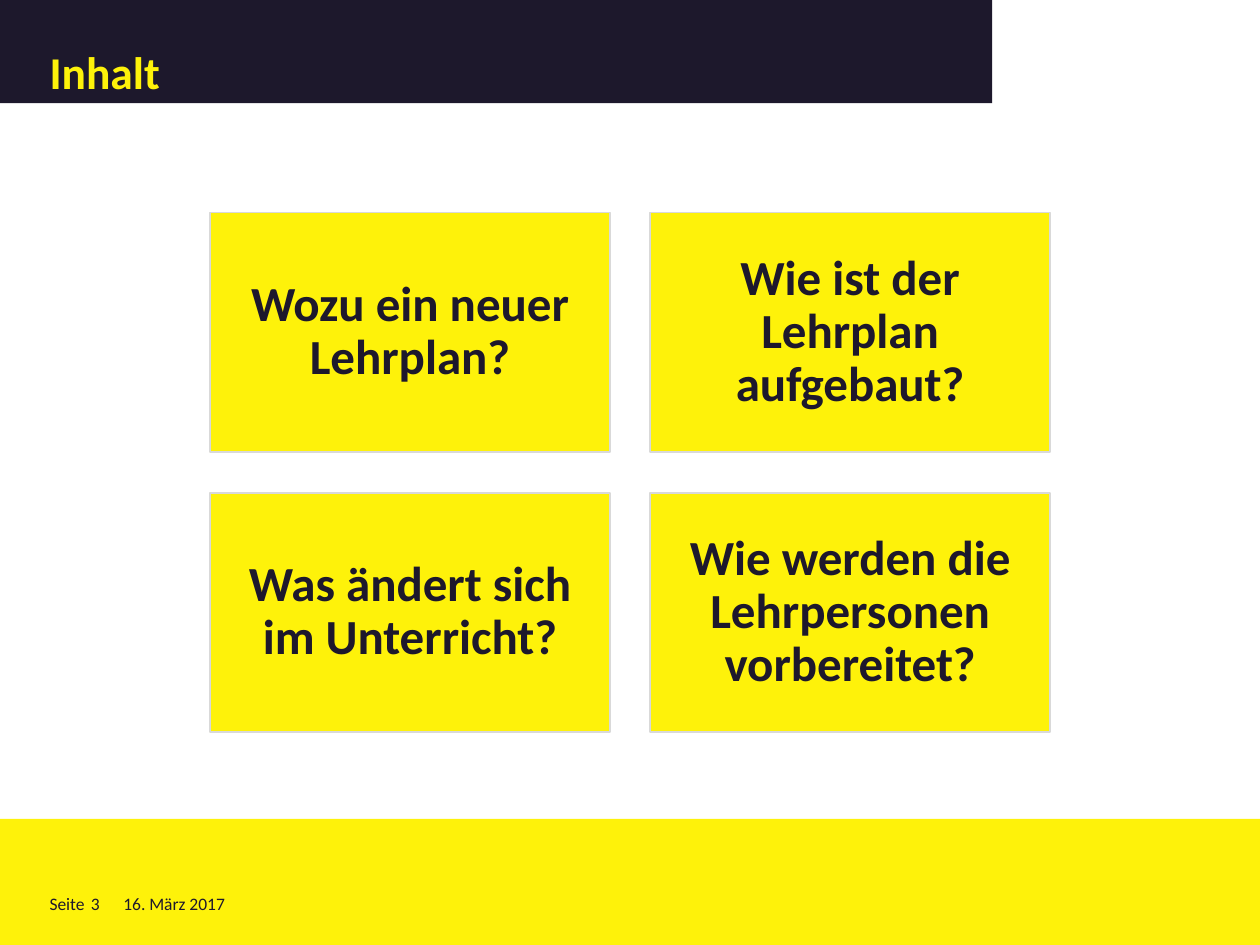
from dataclasses import dataclass

from pptx import Presentation
from pptx.dml.color import RGBColor
from pptx.enum.shapes import MSO_SHAPE
from pptx.enum.text import MSO_ANCHOR, PP_ALIGN
from pptx.shapes.autoshape import Shape
from pptx.slide import Slide
from pptx.util import Pt


@dataclass(frozen=True)
class Theme:
    font: str = "Calibri"
    yellow: RGBColor = RGBColor(0xFE, 0xF2, 0x0A)
    dark: RGBColor = RGBColor(0x1D, 0x18, 0x2C)
    border: RGBColor = RGBColor(0xD9, 0xD9, 0xD9)
    title_size: float = 26
    card_size: float = 28
    footer_size: float = 10


@dataclass(frozen=True)
class Box:
    left: float
    top: float
    width: float
    height: float

    def lengths(self) -> tuple[Pt, Pt, Pt, Pt]:
        return Pt(self.left), Pt(self.top), Pt(self.width), Pt(self.height)


@dataclass(frozen=True)
class FooterItem:
    text: str
    left: float
    width: float


@dataclass(frozen=True)
class TextStyle:
    size: float
    color: RGBColor
    bold: bool = False
    anchor: MSO_ANCHOR = MSO_ANCHOR.TOP
    align: PP_ALIGN = PP_ALIGN.LEFT
    line_spacing: float = 1.0
    margins: tuple[float, float, float, float] = (0, 0, 0, 0)


THEME = Theme()
TITLE_STYLE = TextStyle(THEME.title_size, THEME.yellow, True, MSO_ANCHOR.BOTTOM,
                        line_spacing=0.8, margins=(28.35, 5.67, 5.67, 2.83))
CARD_STYLE = TextStyle(THEME.card_size, THEME.dark, True, MSO_ANCHOR.MIDDLE,
                       PP_ALIGN.CENTER, 0.9, (8.4, 8.4, 8.4, 8.4))
FOOTER_STYLE = TextStyle(THEME.footer_size, THEME.dark)

FIRST_CARD = Box(120, 121.5, 228.5, 137)
CARD_GAP = 23
CARD_COLUMNS = 2
QUESTIONS = (
    "Wozu ein neuer Lehrplan?",
    "Wie ist der Lehrplan aufgebaut?",
    "Was ändert sich im Unterricht?",
    "Wie werden die Lehrpersonen vorbereitet?",
)

FOOTER_TOP = 510.5
FOOTER_HEIGHT = 12.2
FOOTER_ITEMS = (
    FooterItem("Seite", 28.35, 25),
    FooterItem("3", 52, 18),
    FooterItem("16. März 2017", 70.5, 164),
)


def write_text(shape: Shape, text: str, style: TextStyle) -> None:
    frame = shape.text_frame
    frame.word_wrap = True
    frame.vertical_anchor = style.anchor
    (frame.margin_left, frame.margin_top,
     frame.margin_right, frame.margin_bottom) = map(Pt, style.margins)
    paragraph = frame.paragraphs[0]
    paragraph.text = text
    paragraph.alignment = style.align
    paragraph.line_spacing = style.line_spacing
    paragraph.font.name = THEME.font
    paragraph.font.size = Pt(style.size)
    paragraph.font.bold = style.bold
    paragraph.font.color.rgb = style.color


def add_rectangle(slide: Slide, box: Box, fill: RGBColor) -> Shape:
    shape = slide.shapes.add_shape(MSO_SHAPE.RECTANGLE, *box.lengths())
    shape.shadow.inherit = False
    shape.fill.solid()
    shape.fill.fore_color.rgb = fill
    shape.line.fill.background()
    return shape


def add_card(slide: Slide, index: int, question: str) -> None:
    row, column = divmod(index, CARD_COLUMNS)
    box = Box(FIRST_CARD.left + column * (FIRST_CARD.width + CARD_GAP),
              FIRST_CARD.top + row * (FIRST_CARD.height + CARD_GAP),
              FIRST_CARD.width, FIRST_CARD.height)
    card = add_rectangle(slide, box, THEME.yellow)
    card.line.color.rgb = THEME.border
    card.line.width = Pt(1)
    write_text(card, question, CARD_STYLE)


def add_footer_item(slide: Slide, item: FooterItem) -> None:
    box = Box(item.left, FOOTER_TOP, item.width, FOOTER_HEIGHT)
    write_text(slide.shapes.add_textbox(*box.lengths()), item.text, FOOTER_STYLE)


def main() -> None:
    presentation = Presentation()
    presentation.slide_width = Pt(720)
    presentation.slide_height = Pt(540)
    slide = presentation.slides.add_slide(presentation.slide_layouts[6])

    add_rectangle(slide, Box(0, 468, 720, 72), THEME.yellow)
    for item in FOOTER_ITEMS:
        add_footer_item(slide, item)
    title = add_rectangle(slide, Box(0, 0, 567, 59), THEME.dark)
    write_text(title, "Inhalt", TITLE_STYLE)
    for index, question in enumerate(QUESTIONS):
        add_card(slide, index, question)

    presentation.save("out.pptx")


if __name__ == "__main__":
    main()
